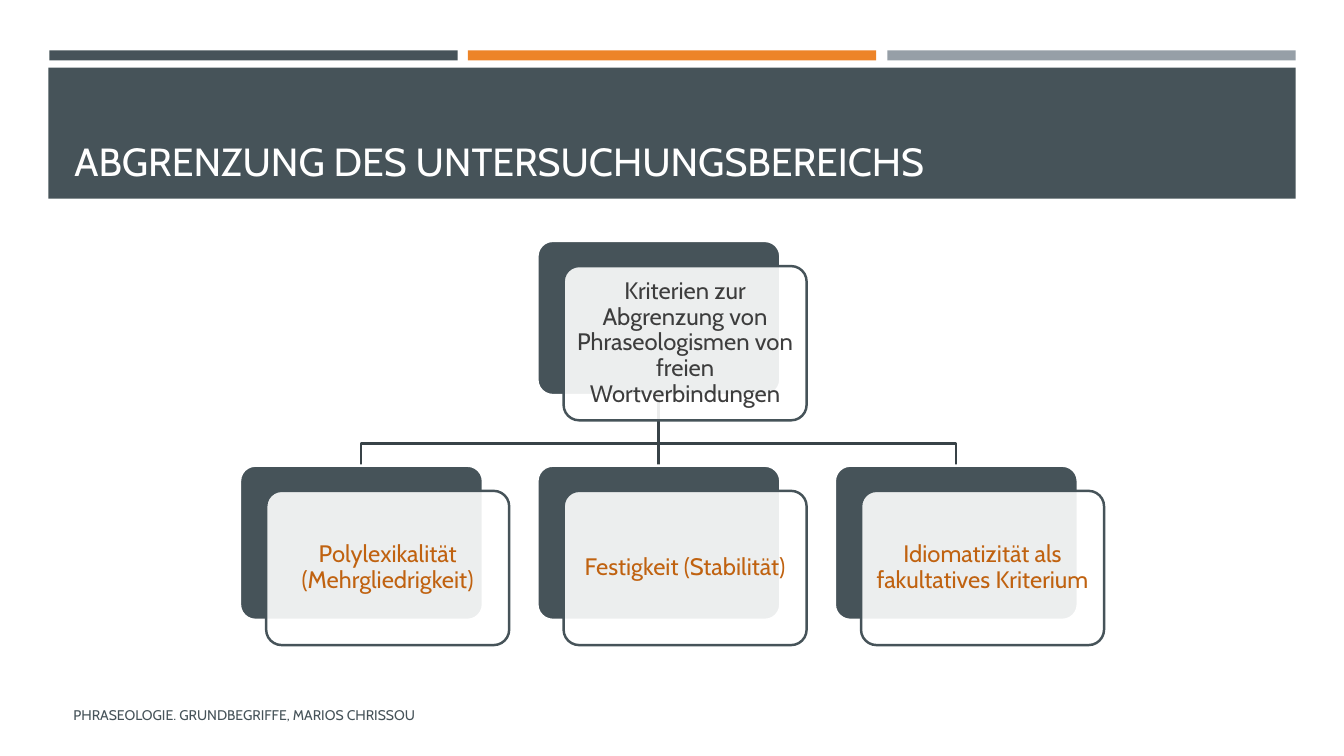
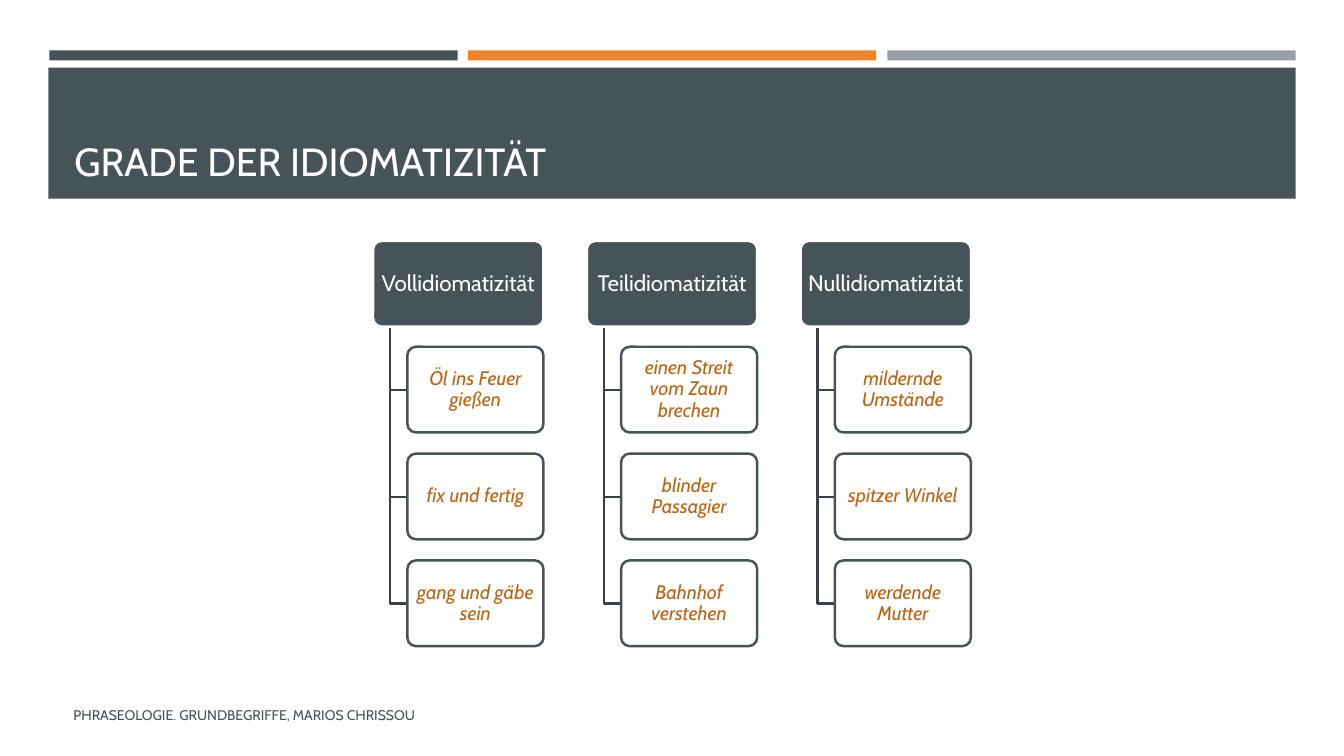
from lxml import etree
from pptx import Presentation
from pptx.dml.color import RGBColor
from pptx.enum.shapes import MSO_CONNECTOR, MSO_SHAPE
from pptx.enum.text import MSO_ANCHOR as ANCHOR, PP_ALIGN as ALIGN
from pptx.oxml.ns import qn
from pptx.util import Pt

PX = 9144  # 100 px to the inch
FONT = "Cabin"
COLORS = {
    "slate": "465359",
    "orange": "ED8428",
    "grey": "969FA7",
    "white": "FFFFFF",
    "line": "384247",
    "ink": "3D3D3D",
    "rust": "C06210",
}


def add_box(slide, left, top, width, height, fill, line=None, opacity=100):
    """Add a plain band, or a rounded card when a line colour is given."""
    kind = MSO_SHAPE.ROUNDED_RECTANGLE if line else MSO_SHAPE.RECTANGLE
    box = slide.shapes.add_shape(kind, left * PX, top * PX, width * PX, height * PX)
    box.shadow.inherit = False
    box.fill.solid()
    box.fill.fore_color.rgb = RGBColor.from_string(COLORS[fill])
    if opacity < 100:
        color = box.fill._xPr.find(qn("a:solidFill"))[0]
        etree.SubElement(color, qn("a:alpha"), val=str(opacity * 1000))
    if line:
        box.adjustments[0] = 0.1
        box.line.color.rgb = RGBColor.from_string(COLORS[line])
        box.line.width = Pt(1.75)
    else:
        box.line.fill.background()
    return box


def write(shape, text, size, color, align=ALIGN.CENTER, anchor=ANCHOR.MIDDLE,
          inset=(10, 5), spacing=1.0, italic=False, wrap=True):
    frame = shape.text_frame
    frame.word_wrap = wrap
    frame.vertical_anchor = anchor
    frame.margin_left = frame.margin_right = inset[0] * PX
    frame.margin_top = frame.margin_bottom = inset[1] * PX
    paragraph = frame.paragraphs[0]
    paragraph.alignment = align
    paragraph.line_spacing = spacing
    run = paragraph.add_run()
    run.text = text
    run.font.name = FONT
    run.font.size = Pt(size)
    run.font.italic = italic
    run.font.color.rgb = RGBColor.from_string(COLORS[color])


prs = Presentation()
prs.slide_width, prs.slide_height = 1333 * PX, 750 * PX

# Shared frame: colour bands, title band, footer
slides = []
for title in ("ABGRENZUNG DES UNTERSUCHUNGSBEREICHS", "GRADE DER IDIOMATIZITÄT"):
    slide = prs.slides.add_slide(prs.slide_layouts[6])
    slides.append(slide)
    for left, color in ((49, "slate"), (464, "orange"), (880, "grey")):
        add_box(slide, left, 50, 405, 10, color)
    add_box(slide, 48, 67, 1237, 130, "slate")
    footer = slide.shapes.add_textbox(63 * PX, 696 * PX, 359 * PX, 27 * PX)
    write(footer, "PHRASEOLOGIE. GRUNDBEGRIFFE, MARIOS CHRISSOU", size=10,
          color="slate", align=ALIGN.LEFT, anchor=ANCHOR.TOP, wrap=False)
    heading = slide.shapes.add_textbox(64 * PX, 77 * PX, 1206 * PX, 111 * PX)
    write(heading, title, size=28, color="white", align=ALIGN.LEFT, anchor=ANCHOR.BOTTOM)
criteria_slide, degrees_slide = slides

# Content and grid of the two diagrams
CARD_W, CARD_H = 241, 153
criteria_x = [238 + 295 * column for column in range(3)]
criteria = [
    (criteria_x[1], 239, "ink",
     "Kriterien zur Abgrenzung von Phraseologismen von freien Wortverbindungen"),
    (criteria_x[0], 462, "rust", "Polylexikalität (Mehrgliedrigkeit)"),
    (criteria_x[1], 462, "rust", "Festigkeit (Stabilität)"),
    (criteria_x[2], 462, "rust", "Idiomatizität als fakultatives Kriterium"),
]

degrees = {
    "Vollidiomatizität": ["Öl ins Feuer gießen", "fix und fertig", "gang und gäbe sein"],
    "Teilidiomatizität": ["einen Streit vom Zaun brechen", "blinder Passagier",
                          "Bahnhof verstehen"],
    "Nullidiomatizität": ["mildernde Umstände", "spitzer Winkel", "werdende Mutter"],
}
degrees_x = [370 + 212 * column for column in range(3)]
examples_y = [344 + 106 * row for row in range(3)]

# Branches lie beneath the cards
first, middle, last = [x + CARD_W // 2 for x in criteria_x]
routes = [
    (criteria_slide, [(first, 462), (first, 440), (last, 440), (last, 462)]),
    (criteria_slide, [(middle, 392), (middle, 462)]),
]
for x in degrees_x:
    for y in examples_y:
        routes.append((degrees_slide, [(x + 17, 323), (x + 17, y + 43), (x + 34, y + 43)]))

for slide, points in routes:
    if len(points) == 2:
        (x1, y1), (x2, y2) = points
        branch = slide.shapes.add_connector(
            MSO_CONNECTOR.STRAIGHT, x1 * PX, y1 * PX, x2 * PX, y2 * PX)
        etree.SubElement(branch._element.spPr, qn("a:effectLst"))
    else:
        outline = slide.shapes.build_freeform(*points[0], scale=PX)
        outline.add_line_segments(points[1:], close=False)
        branch = outline.convert_to_shape()
        branch.fill.background()
        branch.shadow.inherit = False
    branch.line.color.rgb = RGBColor.from_string(COLORS["line"])
    branch.line.width = Pt(1.75)

# Criteria: dark card behind a translucent one
for x, y, color, text in criteria:
    add_box(criteria_slide, x, y, CARD_W, CARD_H, "slate", line="white")
    card = add_box(criteria_slide, x + 26, y + 25, CARD_W, CARD_H, "white",
                   line="slate", opacity=90)
    write(card, text, size=17, color=color, inset=(7, 7), spacing=0.9)

# Degrees: a head card with its examples below
for x, (degree, examples) in zip(degrees_x, degrees.items()):
    head = add_box(degrees_slide, x, 239, 169, 85, "slate", line="white")
    write(head, degree, size=16, color="white", inset=(3, 2), spacing=0.9)
    for y, example in zip(examples_y, examples):
        card = add_box(degrees_slide, x + 34, y, 135, 85, "white", line="slate", opacity=90)
        write(card, example, size=14, color="rust", inset=(3, 2), spacing=0.9, italic=True)

prs.save("out.pptx")
